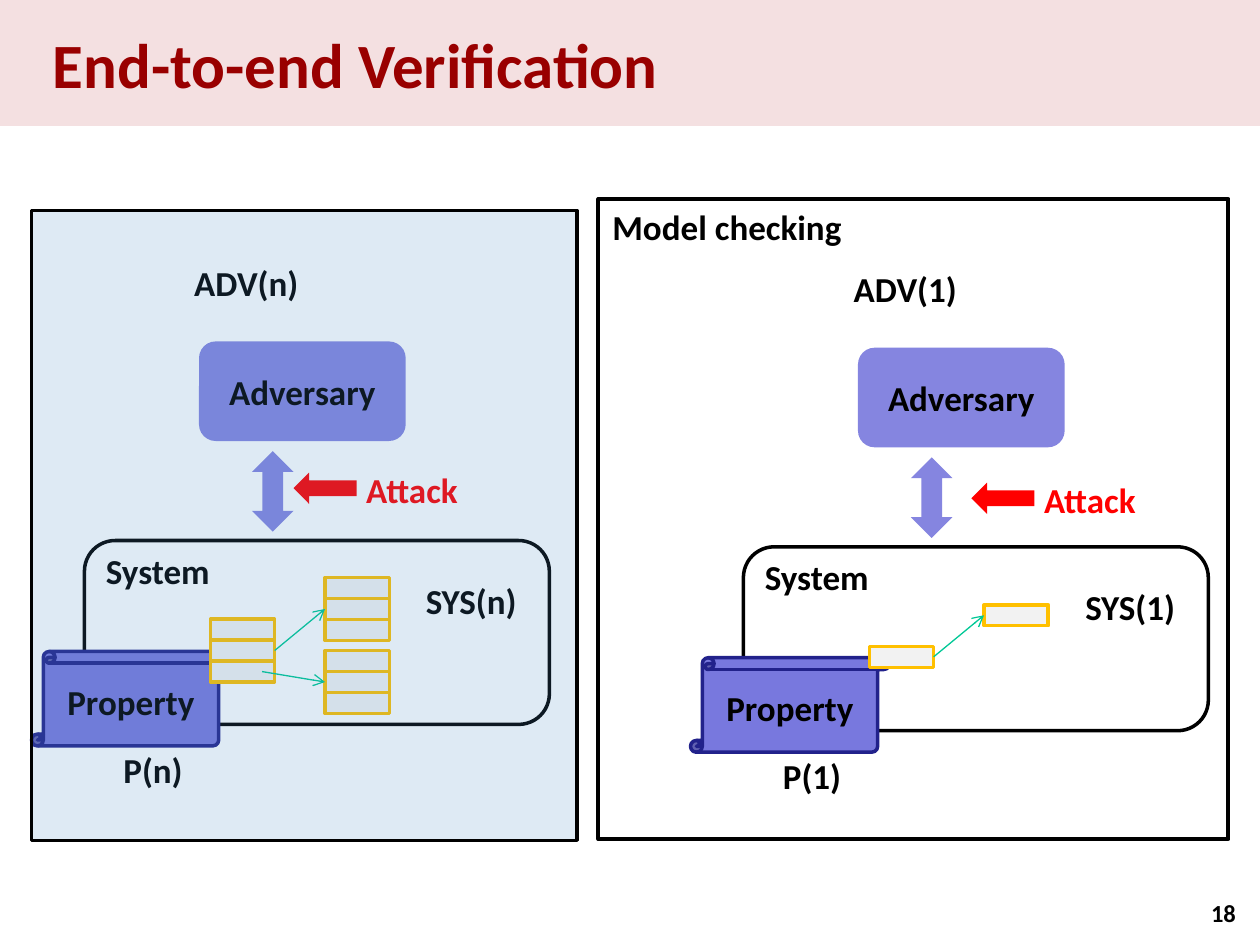
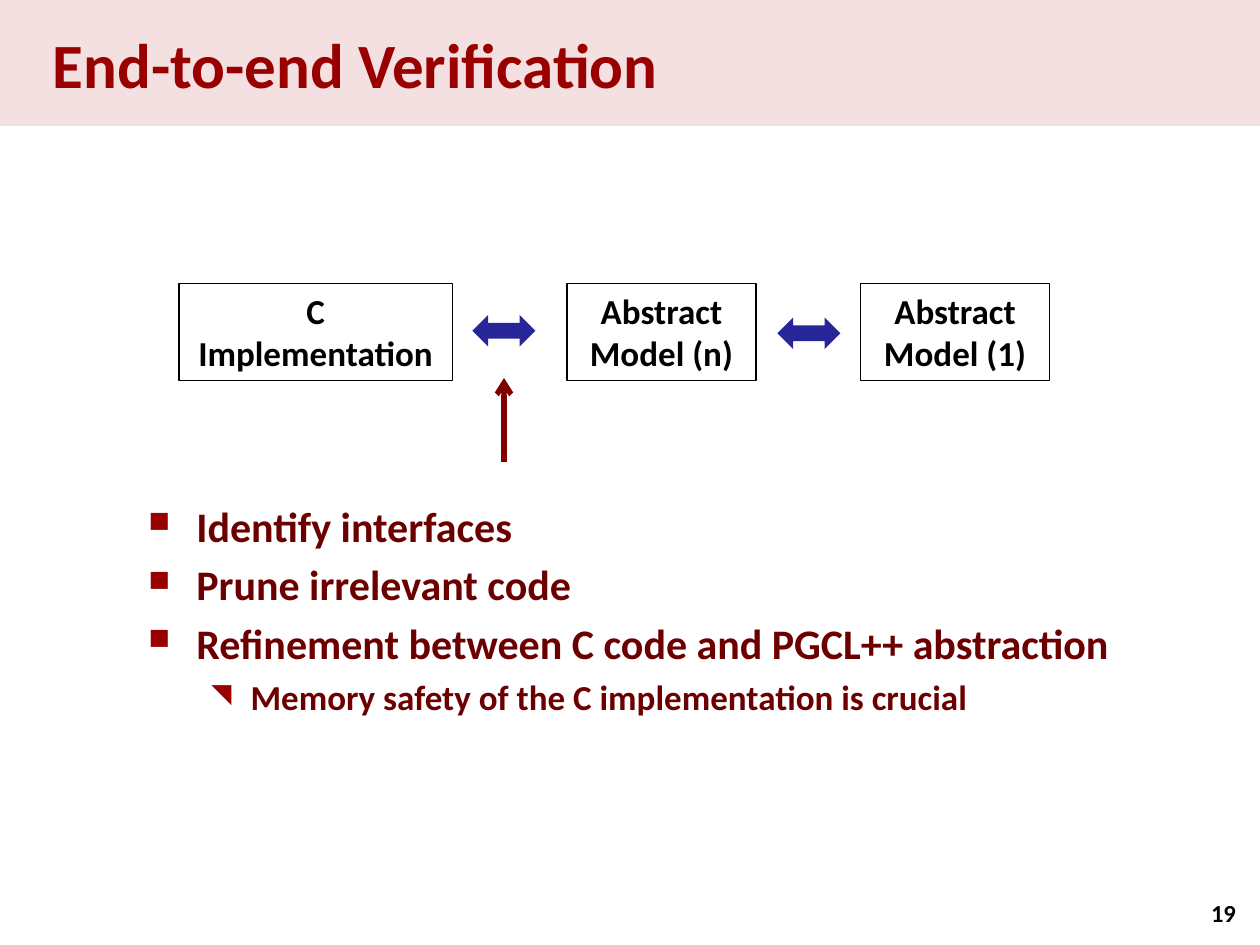
from dataclasses import dataclass

from lxml.etree import SubElement
from pptx import Presentation
from pptx.dml.color import RGBColor
from pptx.enum.shapes import MSO_CONNECTOR as Connector, MSO_SHAPE as Shape
from pptx.enum.text import MSO_ANCHOR as Anchor, PP_ALIGN as Align
from pptx.oxml.ns import qn
from pptx.util import Inches, Pt


@dataclass(frozen=True)
class Theme:
    font: str = "Calibri"
    title_size: int = 36
    bullet_size: int = 24
    label_size: int = 20
    number_size: int = 14
    black: str = "000000"
    white: str = "FFFFFF"
    band: str = "F4E0E1"
    title: str = "990000"
    bullet: str = "6C0000"
    adversary: str = "8585E0"
    property: str = "7878DE"
    property_edge: str = "22228B"
    cell: str = "F2F2F2"
    cell_edge: str = "FFC000"
    pointer: str = "00C896"
    attack: str = "FF0000"
    veil: str = "4D90C6"
    relation: str = "262699"
    marker: str = "800000"


THEME = Theme()
WIDTH, HEIGHT = 10, 7.5

# Content
TITLE = "End-to-end Verification"
FIRST_NUMBER = 18

# Each model: parameter, offset, attack offset, rows per memory block,
# middle rows of the blocks (left, top)
MODELS = [
    ("n", (0, 0), (0, 0), 3, [(1.67, 5.08), (2.58, 4.75), (2.58, 5.33)]),
    ("1", (5.23, 0.05), (5.38, 0.08), 1, [(1.67, 5.08), (2.58, 4.75)]),
]
ROW_WIDTH, ROW_HEIGHT = 0.51, 1 / 6
SECOND_POINTER_START = (2.08, 5.33)

# Boxes (text, left, width) and the arrows between them (left, top)
STAGES = [
    ("C Implementation", 1.42, 2.17),
    ("Abstract Model (n)", 4.5, 1.5),
    ("Abstract Model (1)", 6.83, 1.5),
]
RELATIONS = [(3.75, 2.5), (6.17, 2.52)]

# Bullets: text, level
BULLETS = [
    ("Identify interfaces", 0),
    ("Prune irrelevant code", 0),
    ("Refinement between C code and PGCL++ abstraction", 0),
    ("Memory safety of the C implementation is crucial", 1),
]
# Level: size, left margin, indent, symbol, symbol size in percent
LEVELS = [
    (THEME.bullet_size, 0.38, -0.38, "■", 70),
    (THEME.label_size, 0.81, -0.31, "◥", 75),
]


# Drawing helpers
def rgb(color):
    return RGBColor.from_string(color)


def write(paragraph, text, size=THEME.label_size, color=THEME.black, align=Align.CENTER):
    paragraph.alignment = align
    run = paragraph.add_run()
    run.text = text
    formats = {"name": THEME.font, "size": Pt(size), "bold": True}
    for name, value in formats.items():
        setattr(run.font, name, value)
    run.font.color.rgb = rgb(color)


def add_text(slide, box, text, wrap=True, **style):
    frame = slide.shapes.add_textbox(*map(Inches, box)).text_frame
    frame.word_wrap = wrap
    write(frame.paragraphs[0], text, **style)


def add_shape(slide, kind, box, fill=None, line=None, weight=2, text=None, **style):
    shape = slide.shapes.add_shape(kind, *map(Inches, box))
    shape.shadow.inherit = False
    if fill:
        shape.fill.solid()
        shape.fill.fore_color.rgb = rgb(fill)
    else:
        shape.fill.background()
    if line:
        shape.line.color.rgb = rgb(line)
        shape.line.width = Pt(weight)
    else:
        shape.line.fill.background()
    if text:
        write(shape.text_frame.paragraphs[0], text, **style)
    return shape


def add_arrow(slide, start, end, color, weight):
    connector = slide.shapes.add_connector(Connector.STRAIGHT, *map(Inches, (*start, *end)))
    connector.line.color.rgb = rgb(color)
    connector.line.width = Pt(weight)
    properties = connector._element.spPr
    SubElement(properties.find(qn("a:ln")), qn("a:tailEnd"), type="arrow")
    SubElement(properties, qn("a:effectLst"))
    return connector


def new_slide(presentation, number):
    slide = presentation.slides.add_slide(presentation.slide_layouts[6])
    add_text(slide, (9.42, 7.08, 0.58, 0.34), str(number), size=THEME.number_size)
    band = add_shape(slide, Shape.RECTANGLE, (0, 0, WIDTH, 1), THEME.band, text=TITLE,
                     size=THEME.title_size, color=THEME.title, align=Align.LEFT)
    band.text_frame.margin_left = Inches(0.42)
    return slide


# Slide parts
def add_memory(slide, place, rows, middles):
    cells = []
    cell_style = {"fill": THEME.cell, "line": THEME.cell_edge}
    for left, top in middles:
        if rows > 1:
            block = place(left, top - ROW_HEIGHT * (rows // 2), ROW_WIDTH, ROW_HEIGHT * rows)
            add_shape(slide, Shape.RECTANGLE, block, **cell_style)
        cells.append(add_shape(slide, Shape.RECTANGLE,
                               place(left, top, ROW_WIDTH, ROW_HEIGHT), **cell_style))
    source, *targets = cells
    for index, target in enumerate(targets):
        start = place(*SECOND_POINTER_START)
        pointer = add_arrow(slide, start, start, THEME.pointer, 0.75)
        if index == 0:
            pointer.begin_connect(source, 3)
        pointer.end_connect(target, 1)


def add_model(slide, parameter, offset, rows, middles):
    def place(left, top, *size):
        return (left + offset[0], top + offset[1], *size)

    add_shape(slide, Shape.VERTICAL_SCROLL, place(0.67, 5.75, 1.09, 0.67),
              line=THEME.white, text=f"P({parameter})")
    system = add_shape(slide, Shape.ROUNDED_RECTANGLE, place(0.67, 4.29, 3.69, 1.46),
                       THEME.white, THEME.black, text="System", align=Align.LEFT)
    system.text_frame.vertical_anchor = Anchor.TOP
    system.text_frame.margin_top = 0
    add_shape(slide, Shape.ROUNDED_RECTANGLE, place(1.58, 2.71, 1.64, 0.79),
              THEME.adversary, text="Adversary")
    add_shape(slide, Shape.UP_DOWN_ARROW, place(2, 3.58, 0.33, 0.64), THEME.adversary)
    add_shape(slide, Shape.VERTICAL_SCROLL, place(0.25, 5.17, 1.58, 0.75),
              THEME.property, THEME.property_edge, text="Property")
    label = add_shape(slide, Shape.FOLDED_CORNER, place(1.33, 2.03, 1.25, 0.63),
                      line=THEME.white, text=f"ADV({parameter})")
    geometry = label._element.spPr.find(qn("a:prstGeom"))
    SubElement(geometry.find(qn("a:avLst")), qn("a:gd"), name="adj", fmla="val 33400")
    add_shape(slide, Shape.FOLDED_CORNER, place(3.17, 4.5, 1.14, 0.63),
              line=THEME.white, text=f"SYS({parameter})")
    add_memory(slide, place, rows, middles)


def add_attack(slide, across, down):
    add_text(slide, (2.79 + across, 3.67 + down, 0.96, 0.44), "Attack",
             wrap=False, color=THEME.attack)
    add_shape(slide, Shape.LEFT_ARROW, (2.33 + across, 3.75 + down, 0.5, 0.25), THEME.attack)


def add_bullets(slide):
    frame = slide.shapes.add_textbox(*map(Inches, (1.08, 3.92, 7.92, 1.58))).text_frame
    frame.word_wrap = True
    for index, (text, level) in enumerate(BULLETS):
        size, margin, indent, symbol, percent = LEVELS[level]
        paragraph = frame.add_paragraph() if index else frame.paragraphs[0]
        write(paragraph, text, size, THEME.bullet, Align.LEFT)
        paragraph.level = level
        paragraph.space_before = Pt(size * 0.2)
        properties = paragraph._p.get_or_add_pPr()
        properties.set("marL", str(Inches(margin)))
        properties.set("indent", str(Inches(indent)))
        color = SubElement(properties, qn("a:buClr"))
        SubElement(color, qn("a:srgbClr"), val=THEME.title)
        SubElement(properties, qn("a:buSzPct"), val=str(percent * 1000))
        SubElement(properties, qn("a:buChar"), char=symbol)


# Slides
def build_models_slide(presentation, number):
    slide = new_slide(presentation, number)
    for parameter, offset, _, rows, middles in MODELS:
        add_model(slide, parameter, offset, rows, middles)
    for _, _, attack_offset, _, _ in MODELS:
        add_attack(slide, *attack_offset)
    add_shape(slide, Shape.RECTANGLE, (4.75, 1.58, 5, 5.08), line=THEME.black, weight=2.25)
    add_text(slide, (4.75, 1.58, 2.04, 0.44), "Model checking", wrap=False)
    veil = add_shape(slide, Shape.RECTANGLE, (0.25, 1.67, 4.33, 5), THEME.veil, THEME.black)
    veil_color = veil._element.spPr.find(qn("a:solidFill")).find(qn("a:srgbClr"))
    SubElement(veil_color, qn("a:alpha"), val="18000")


def build_refinement_slide(presentation, number):
    slide = new_slide(presentation, number)
    for text, left, width in STAGES:
        stage = add_shape(slide, Shape.RECTANGLE, (left, 2.25, width, 0.77),
                          line=THEME.black, weight=0.75, text=text)
        stage.text_frame.vertical_anchor = Anchor.TOP
    for left, top in RELATIONS:
        add_shape(slide, Shape.LEFT_RIGHT_ARROW, (left, top, 0.5, 0.25), THEME.relation)
    add_arrow(slide, (4, 3.67), (4, 3), THEME.marker, 3)
    add_bullets(slide)


def main():
    presentation = Presentation()
    presentation.slide_width, presentation.slide_height = Inches(WIDTH), Inches(HEIGHT)
    builders = (build_models_slide, build_refinement_slide)
    for number, build in enumerate(builders, FIRST_NUMBER):
        build(presentation, number)
    presentation.save("out.pptx")


if __name__ == "__main__":
    main()
